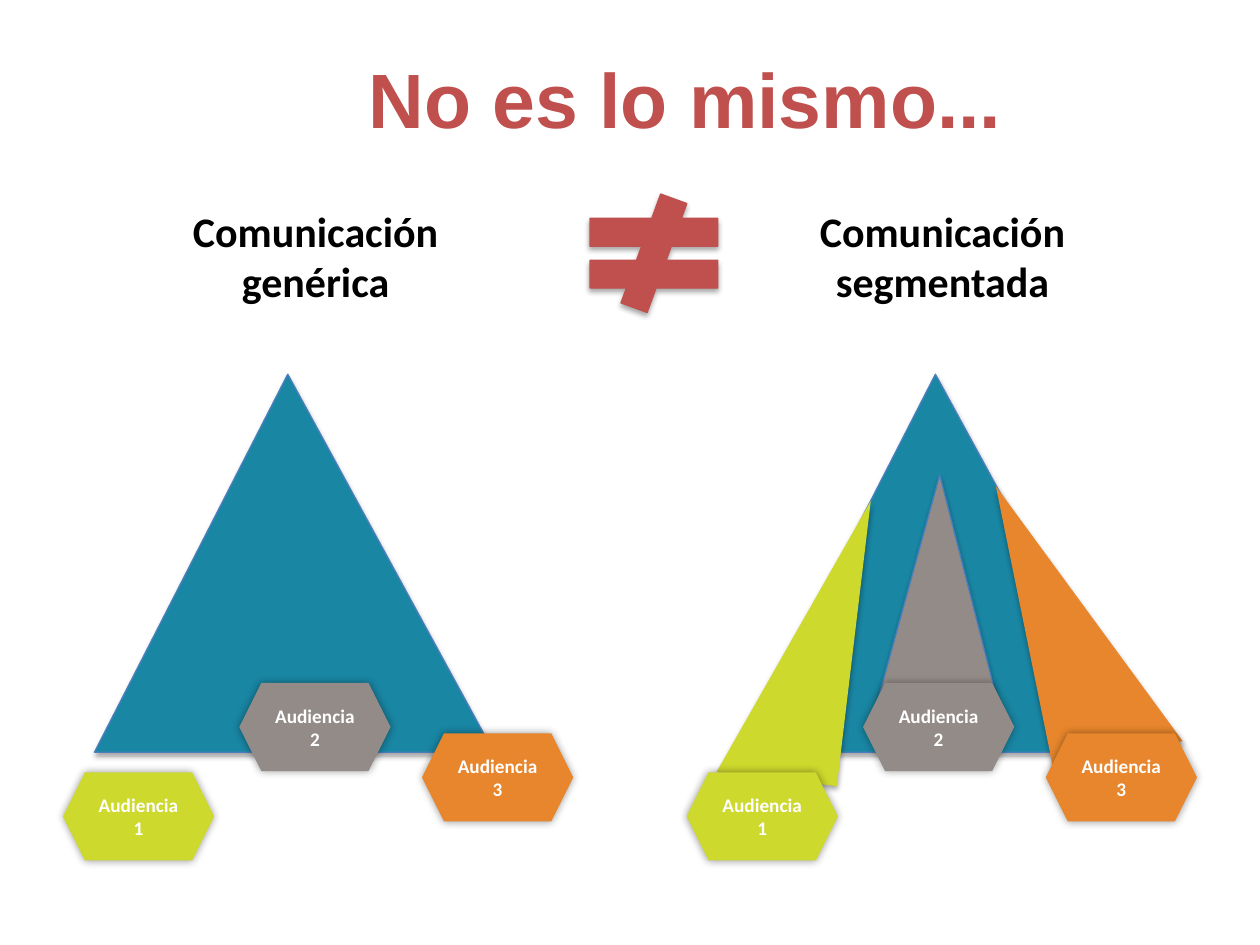
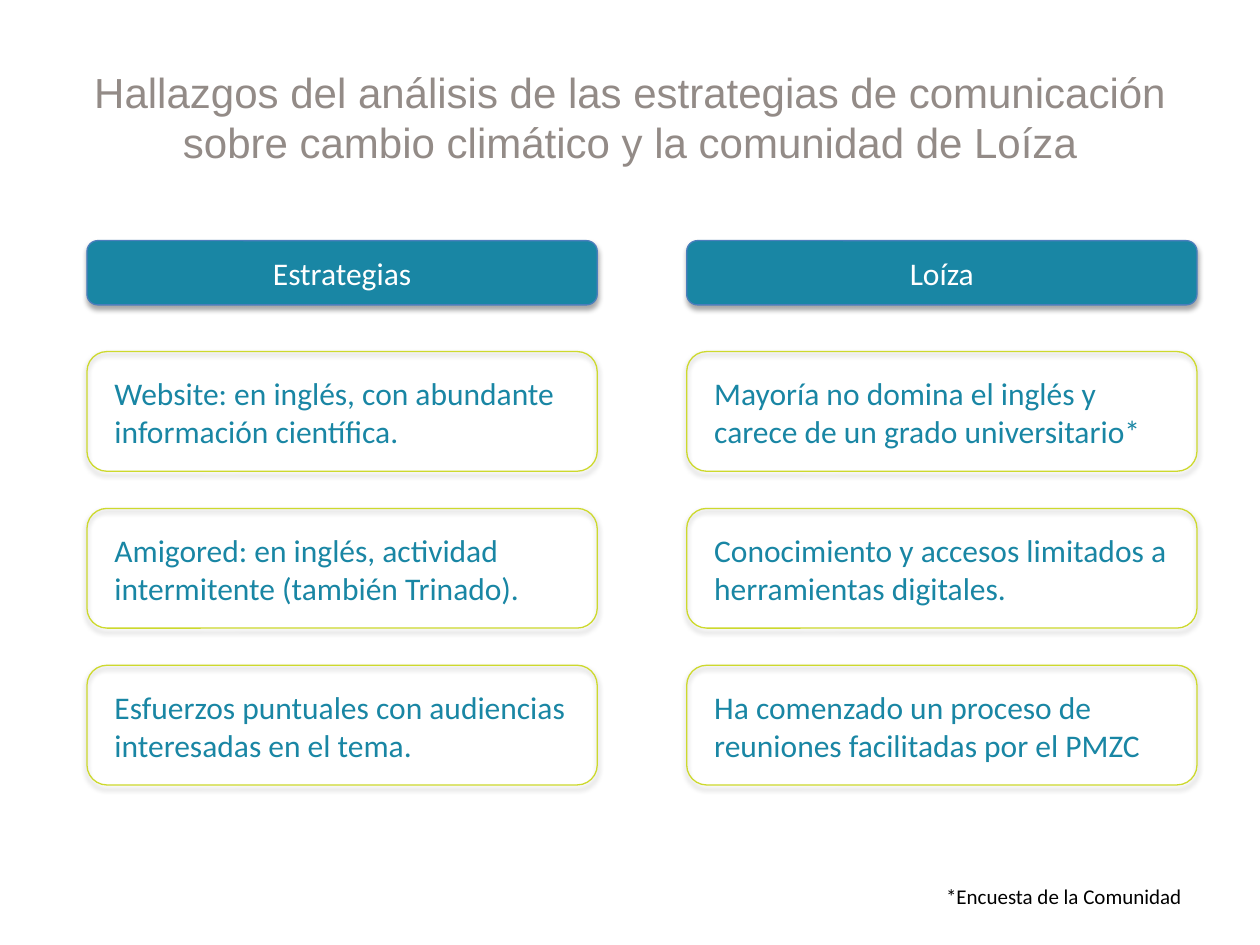
"""Build two slides on generic versus segmented communication."""
import dataclasses

import lxml.etree
import pptx
import pptx.dml.color
import pptx.enum.shapes
import pptx.enum.text
import pptx.oxml.ns
import pptx.util

Inches = pptx.util.Inches
Pt = pptx.util.Pt
Preset = pptx.enum.shapes.MSO_SHAPE
Align = pptx.enum.text.PP_ALIGN
Anchor = pptx.enum.text.MSO_ANCHOR
AutoSize = pptx.enum.text.MSO_AUTO_SIZE


@dataclasses.dataclass(frozen=True)
class Theme:
    teal: str = "1986A4"
    lime: str = "CDD92D"
    orange: str = "E7862C"
    grey: str = "938B87"
    red: str = "C0504D"
    edge: str = "4B7EBC"
    black: str = "000000"
    white: str = "FFFFFF"
    title_font: str = "Arial"
    body_font: str = "Calibri"
    headline: int = 44
    heading: int = 24
    body: int = 18
    note: int = 12
    label: int = 11
    line: float = 0.75


THEME = Theme()
SOFT = dict(alpha=35, blur=3.1, distance=1.8, angle=90)
GLOW = dict(alpha=40, blur=5, distance=0, angle=0)

CONTRAST_TITLE = "No es lo mismo..."
APPROACHES = [
    ("Comunicación\ngenérica", (1.42, 1.58, 2.17, 0.91), False),
    ("Comunicación segmentada", (5.92, 1.58, 3.12, 0.91), True),
]
PYRAMIDS = [
    ((5.89, 2.97, 3.17, 3), 0.484, 0, THEME.teal, THEME.edge),
    ((5.82, 3.91, 0.96, 2.28), 1, 6.8, THEME.lime, None),
    ((8.12, 3.73, 1.05, 2.28), 0, 348.5, THEME.orange, None),
    ((0.75, 2.97, 3.17, 3), 0.484, 0, THEME.teal, THEME.edge),
    ((6.95, 3.77, 0.98, 1.85), 0.519, 0, THEME.grey, THEME.edge),
]
AUDIENCES = [
    ("Audiencia 1", 0, 6.13, THEME.lime),
    ("Audiencia 3", 2.85, 5.82, THEME.orange),
    ("Audiencia 2", 1.4, 5.42, THEME.grey),
]
AUDIENCE_LEFTS = (0.5, 5.45)

FINDINGS_TITLE = (
    "Hallazgos del análisis de las estrategias de comunicación "
    "sobre cambio climático y la comunidad de Loíza"
)
FINDINGS = {
    "Estrategias": [
        "Website: en inglés, con abundante información científica.",
        "Amigored: en inglés, actividad intermitente (también Trinado).",
        "Esfuerzos puntuales con audiencias interesadas en el tema.",
    ],
    "Loíza": [
        "Mayoría no domina el inglés y carece de un grado universitario*",
        "Conocimiento y accesos limitados a herramientas digitales.",
        "Ha comenzado un proceso de reuniones facilitadas por el PMZC",
    ],
}
SURVEY_NOTE = "*Encuesta de la Comunidad"
COLUMN_LEFT, COLUMN_STEP, COLUMN_WIDTH = 0.69, 4.76, 4.05
CARD_TOP, CARD_STEP, CARD_HEIGHT = 2.79, 1.245, 0.95
CARD_INSET = 0.12


def rgb(color):
    return pptx.dml.color.RGBColor.from_string(color)


def write(holder, text, *, size, color, font=THEME.body_font, bold=False,
          align=Align.CENTER, anchor=Anchor.MIDDLE, wrap=True, grow=False):
    frame = holder.text_frame
    frame.word_wrap = wrap
    frame.vertical_anchor = anchor
    frame.auto_size = AutoSize.SHAPE_TO_FIT_TEXT if grow else AutoSize.NONE
    frame.text = text
    for paragraph in frame.paragraphs:
        paragraph.alignment = align
        paragraph.font.size = Pt(size)
        paragraph.font.name = font
        paragraph.font.bold = bold
        paragraph.font.color.rgb = rgb(color)


def add_text(slide, box, text, **style):
    write(slide.shapes.add_textbox(*map(Inches, box)), text, **style)


def add_title(slide, box, text, **style):
    add_text(slide, box, text, font=THEME.title_font, **style)


def cast_shadow(shape, alpha, blur, distance, angle):
    shape.shadow.inherit = False
    qn = pptx.oxml.ns.qn
    effects = shape.element.spPr.find(qn("a:effectLst"))
    outer = lxml.etree.SubElement(
        effects, qn("a:outerShdw"), blurRad=str(Pt(blur)),
        dist=str(Pt(distance)), dir=str(angle * 60000), rotWithShape="0")
    tint = lxml.etree.SubElement(outer, qn("a:srgbClr"), val=THEME.black)
    lxml.etree.SubElement(tint, qn("a:alpha"), val=str(alpha * 1000))


def add_figure(slide, preset, box, fill=None, edge=None, shadow=SOFT):
    figure = slide.shapes.add_shape(preset, *map(Inches, box))
    if fill:
        figure.fill.solid()
        figure.fill.fore_color.rgb = rgb(fill)
    else:
        figure.fill.background()
    if edge:
        figure.line.color.rgb = rgb(edge)
        figure.line.width = Pt(THEME.line)
    else:
        figure.line.fill.background()
    cast_shadow(figure, **shadow)
    return figure


def build_contrast(slide):
    for approach, box, wrap in APPROACHES:
        add_text(slide, box, approach, size=THEME.heading, color=THEME.black,
                 bold=True, anchor=Anchor.TOP, wrap=wrap, grow=True)
    for box, apex, rotation, fill, edge in PYRAMIDS:
        pyramid = add_figure(slide, Preset.ISOSCELES_TRIANGLE, box, fill, edge)
        pyramid.adjustments[0] = apex
        pyramid.rotation = rotation
    for left in AUDIENCE_LEFTS:
        for audience, offset, top, fill in AUDIENCES:
            badge = add_figure(slide, Preset.HEXAGON,
                               (left + offset, top, 1.2, 0.7), fill, shadow=GLOW)
            write(badge, audience, size=THEME.label, color=THEME.white, bold=True)
    add_title(slide, (0.94, 0.15, 9, 1.25), CONTRAST_TITLE,
              size=THEME.headline, color=THEME.red, bold=True)
    add_figure(slide, Preset.MATH_NOT_EQUAL, (4.5, 1.54, 1.38, 0.94),
               THEME.red, THEME.red)


def build_findings(slide):
    add_title(slide, (0.5, 0.3, 9, 1.25), FINDINGS_TITLE,
              size=THEME.heading, color=THEME.grey)
    for column, (topic, findings) in enumerate(FINDINGS.items()):
        left = COLUMN_LEFT + column * COLUMN_STEP
        header = add_figure(slide, Preset.ROUNDED_RECTANGLE,
                            (left, 1.91, COLUMN_WIDTH, 0.51),
                            THEME.teal, THEME.edge)
        write(header, topic, size=THEME.body, color=THEME.white)
        for row, finding in enumerate(findings):
            top = CARD_TOP + row * CARD_STEP
            add_figure(slide, Preset.ROUNDED_RECTANGLE,
                       (left, top, COLUMN_WIDTH, CARD_HEIGHT), edge=THEME.lime)
            add_text(slide, (left + CARD_INSET, top + 0.13,
                             COLUMN_WIDTH - 2 * CARD_INSET, 0.71), finding,
                     size=THEME.body, color=THEME.teal, align=Align.LEFT,
                     anchor=Anchor.TOP, grow=True)
    add_text(slide, (7.41, 6.96, 2.09, 0.3), SURVEY_NOTE, size=THEME.note,
             color=THEME.black, align=Align.LEFT, anchor=Anchor.TOP,
             wrap=False, grow=True)


def main():
    deck = pptx.Presentation()
    deck.slide_width, deck.slide_height = Inches(10), Inches(7.5)
    for build in (build_contrast, build_findings):
        build(deck.slides.add_slide(deck.slide_layouts[6]))
    deck.save("out.pptx")


if __name__ == "__main__":
    main()
